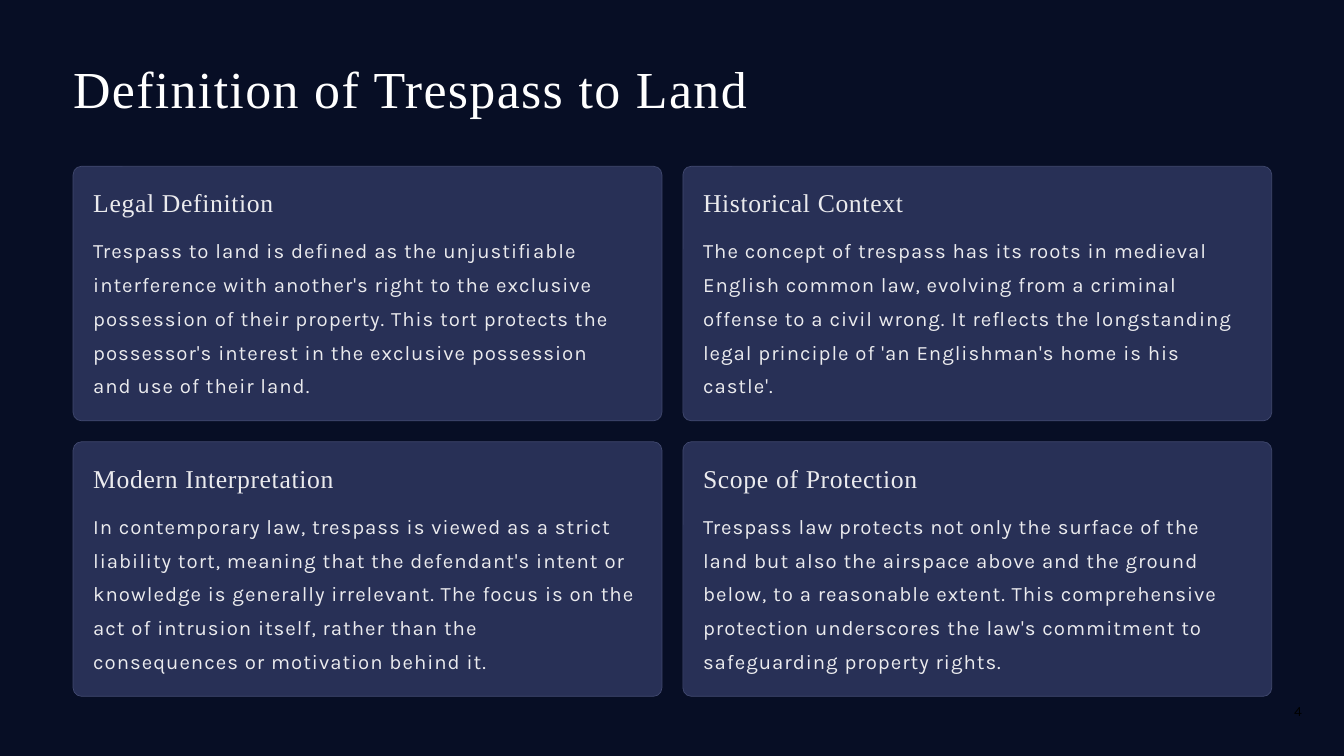
"""Build the slide on the definition of trespass to land."""
from pptx import Presentation
from pptx.dml.color import RGBColor
from pptx.enum.shapes import MSO_SHAPE as Shape
from pptx.enum.text import PP_ALIGN as Align
from pptx.util import Inches, Pt

WIDE, HIGH = 16, 9
COLS = 2
LEFT, TOP = 0.87, 1.98
CARD_W, CARD_H = 7.01, 3.03
GAP, PAD = 0.25, 0.24
CURVE = 0.1

NIGHT, NAVY, EDGE = "070E25", "283056", "41496F"
WHITE, PALE, BLACK = "FFFFFF", "EBEBEE", "000000"
SERIF, SANS = "Times New Roman", "Karla"

STYLES = {
    "title": dict(face=SERIF, size=44.5, hue=WHITE, track=1.2, before=1.1, lead=1.0),
    "head": dict(face=SERIF, size=22, hue=PALE, track=0.6, before=0.9, lead=1.0),
    "body": dict(face=SANS, size=17.5, hue=PALE, track=0.85, before=9.4, lead=1.38),
    "page": dict(face=SANS, size=12, hue=BLACK, track=0, before=0, lead=1.0),
}

CARDS = [
    ("Legal Definition", [
        "Trespass to land is defined as the unjustifiable ",
        "interference with another's right to the exclusive ",
        "possession of their property. This tort protects the ",
        "possessor's interest in the exclusive possession ",
        "and use of their land."]),
    ("Historical Context", [
        "The concept of trespass has its roots in medieval ",
        "English common law, evolving from a criminal ",
        "offense to a civil wrong. It reflects the longstanding ",
        "legal principle of 'an Englishman's home is his ",
        "castle'."]),
    ("Modern Interpretation", [
        "In contemporary law, trespass is viewed as a strict ",
        "liability tort, meaning that the defendant's intent or ",
        "knowledge is generally irrelevant. The focus is on the ",
        "act of intrusion itself, rather than the ",
        "consequences or motivation behind it."]),
    ("Scope of Protection", [
        "Trespass law protects not only the surface of the ",
        "land but also the airspace above and the ground ",
        "below, to a reasonable extent. This comprehensive ",
        "protection underscores the law's commitment to ",
        "safeguarding property rights."]),
]

deck = Presentation()
deck.slide_width, deck.slide_height = Inches(WIDE), Inches(HIGH)
slide = deck.slides.add_slide(deck.slide_layouts[6])
shapes = slide.shapes


def tint(fill, hue):
    fill.solid()
    fill.fore_color.rgb = RGBColor.from_string(hue)


def write(x, y, w, h, *parts, align=Align.LEFT):
    frame = shapes.add_textbox(Inches(x), Inches(y), Inches(w), Inches(h)).text_frame
    frame.word_wrap = True
    frame.margin_left = frame.margin_right = frame.margin_bottom = 0
    frame.margin_top = Inches(0.01)
    for i, (name, lines) in enumerate(parts):
        style = STYLES[name]
        para = frame.add_paragraph() if i else frame.paragraphs[0]
        para.alignment = align
        para.space_before = Pt(style["before"])
        para.line_spacing = style["lead"]
        for j, line in enumerate(lines):
            if j:
                para.add_line_break()
            run = para.add_run()
            run.text = line
            run.font.name = style["face"]
            run.font.size = Pt(style["size"])
            tint(run.font.fill, style["hue"])
            run._r.get_or_add_rPr().set("spc", str(round(style["track"] * 100)))


tint(slide.background.fill, NIGHT)
write(LEFT, 0.66, WIDE - 2 * LEFT, 0.77, ("title", ["Definition of Trespass to Land"]))

for i, (head, body) in enumerate(CARDS):
    row, col = divmod(i, COLS)
    x = LEFT + col * (CARD_W + GAP)
    y = TOP + row * (CARD_H + GAP)
    card = shapes.add_shape(Shape.ROUNDED_RECTANGLE, Inches(x), Inches(y),
                            Inches(CARD_W), Inches(CARD_H))
    card.adjustments[0] = CURVE / CARD_H
    card.shadow.inherit = False
    tint(card.fill, NAVY)
    tint(card.line.fill, EDGE)
    card.line.width = Pt(0.6)
    write(x + PAD, y + PAD, CARD_W - 2 * PAD, CARD_H - 2 * PAD,
          ("head", [head]), ("body", body))

write(15.1, 8.35, 0.4, 0.25, ("page", ["4"]), align=Align.RIGHT)

deck.save("out.pptx")
